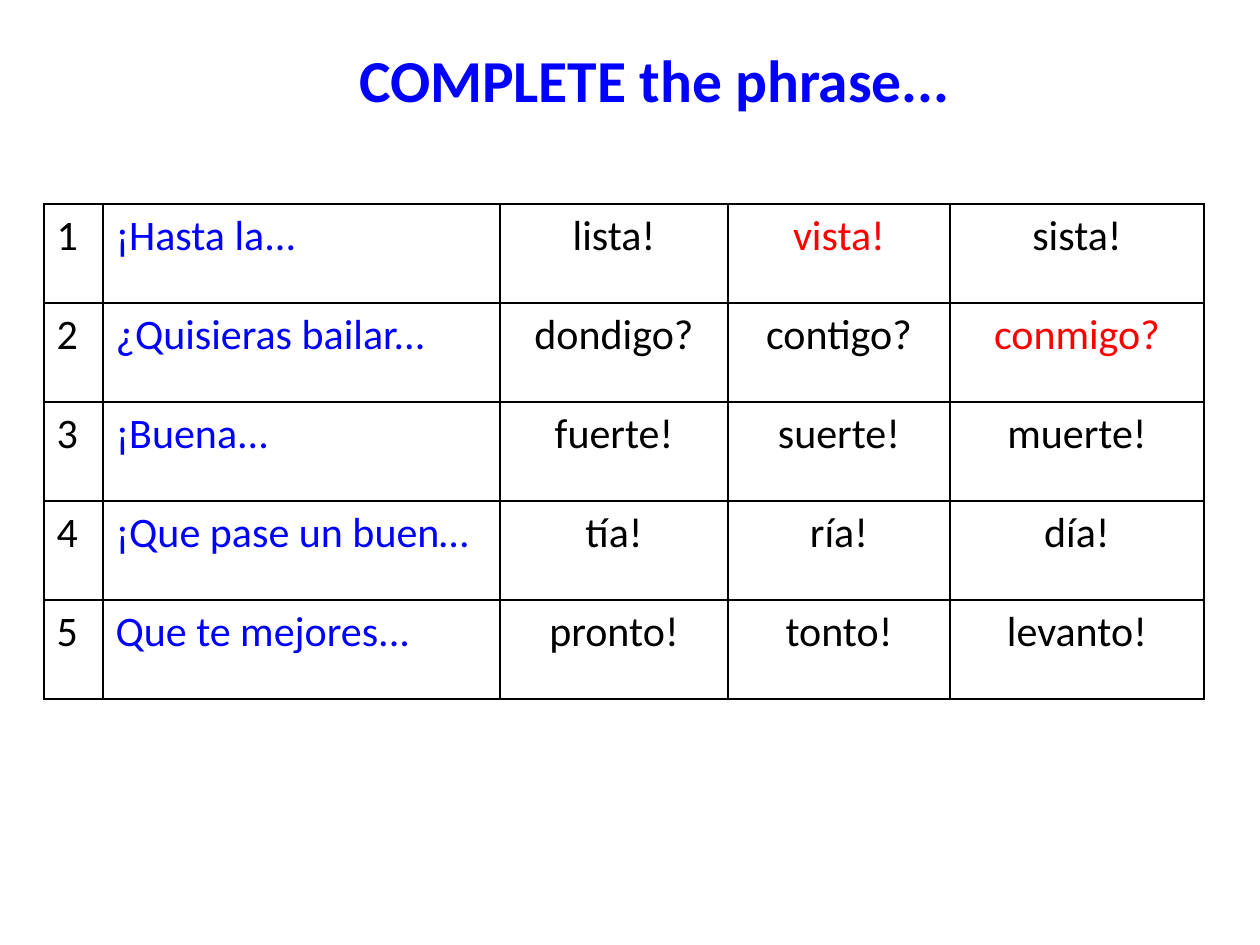
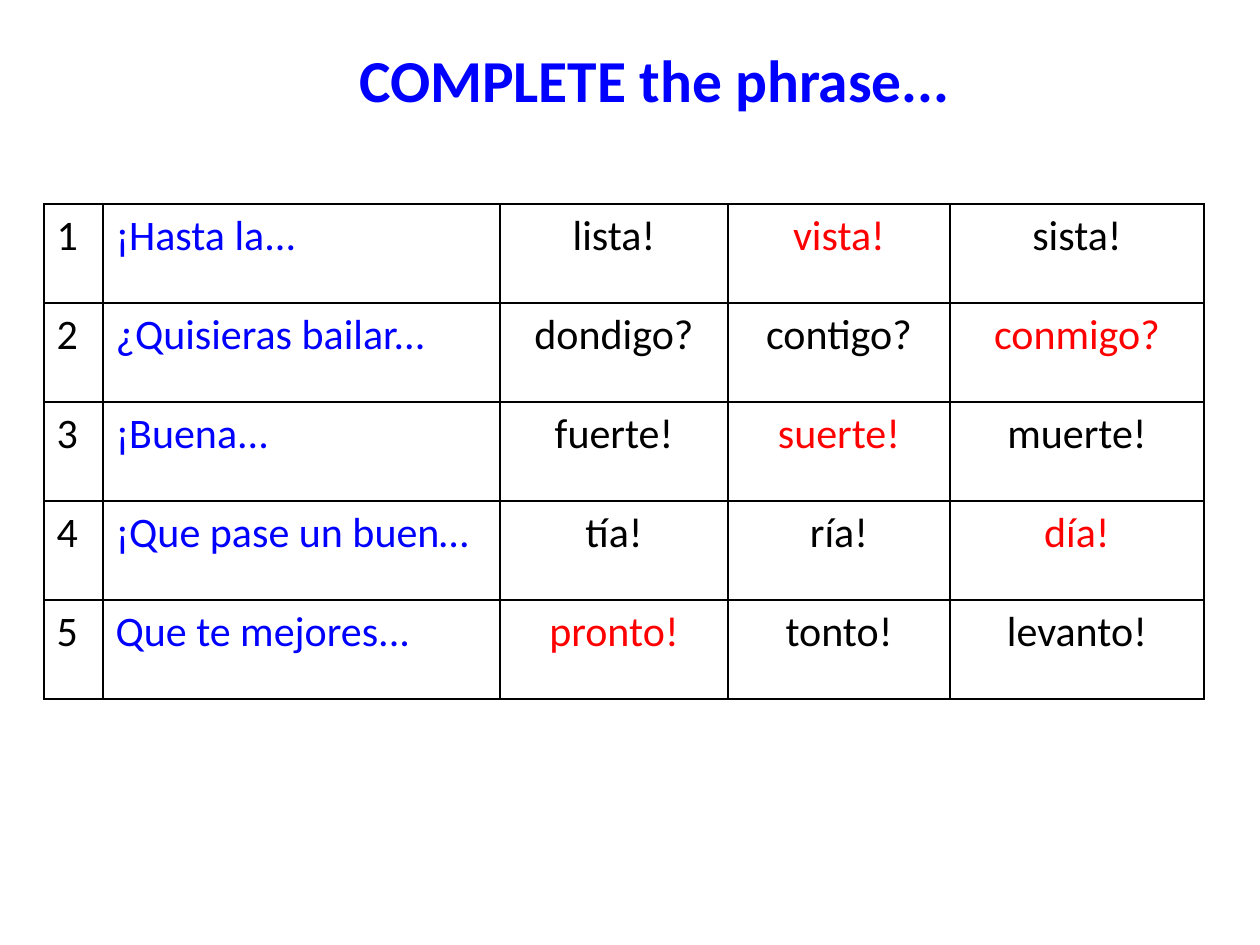
"""Build two phrase-completion quiz slides, revealing more answers on the second."""
from dataclasses import dataclass

from lxml import etree
from pptx import Presentation
from pptx.dml.color import RGBColor
from pptx.enum.text import MSO_ANCHOR, PP_ALIGN
from pptx.oxml.ns import qn
from pptx.util import Emu, Pt

LEFT, CENTER = PP_ALIGN.LEFT, PP_ALIGN.CENTER
MIDDLE = MSO_ANCHOR.MIDDLE


@dataclass(frozen=True)
class Theme:
    font: str = "Calibri"
    title_size: int = 34
    cell_size: int = 24
    text: str = "000000"
    prompt: str = "0000FF"
    answer: str = "FF0000"
    border: str = "000000"
    border_width: int = 1


THEME = Theme()
TITLE = "COMPLETE the phrase..."
PHRASES = [
    ("¡Hasta la...", ["lista!", "vista!", "sista!"], "vista!"),
    ("¿Quisieras bailar...", ["dondigo?", "contigo?", "conmigo?"], "conmigo?"),
    ("¡Buena...", ["fuerte!", "suerte!", "muerte!"], "suerte!"),
    ("¡Que pase un buen…", ["tía!", "ría!", "día!"], "día!"),
    ("Que te mejores...", ["pronto!", "tonto!", "levanto!"], "pronto!"),
]
REVEALED_COUNTS = [2, 5]
COL_WIDTHS = [59, 397, 228, 222, 254]
ROW_HEIGHT = 99


def px(n):
    return Emu(round(n * 914400 / 126))


def write(tf, text, size, color, align, bold=False):
    tf.text = text
    p = tf.paragraphs[0]
    p.alignment = align
    font = p.runs[0].font
    font.name = THEME.font
    font.size = Pt(size)
    font.bold = bold
    font.color.rgb = RGBColor.from_string(color)


prs = Presentation()
prs.slide_width, prs.slide_height = px(1260), px(945)

for revealed in REVEALED_COUNTS:
    s = prs.slides.add_slide(prs.slide_layouts[6])
    tf = s.shapes.add_textbox(px(49), px(0), px(1211), px(158)).text_frame
    tf.word_wrap = True
    tf.vertical_anchor = MIDDLE
    write(tf, TITLE, THEME.title_size, THEME.prompt, CENTER, bold=True)

    table = s.shapes.add_table(
        len(PHRASES), len(COL_WIDTHS), px(44), px(204),
        px(sum(COL_WIDTHS)), px(ROW_HEIGHT * len(PHRASES)),
    ).table
    table.first_row = table.horz_banding = False
    for col, width in zip(table.columns, COL_WIDTHS):
        col.width = px(width)

    for i, (prompt, options, answer) in enumerate(PHRASES):
        table.rows[i].height = px(ROW_HEIGHT)
        for j, text in enumerate([str(i + 1), prompt, *options]):
            cell = table.cell(i, j)
            color = THEME.prompt if j == 1 else THEME.text
            if i < revealed and text == answer:
                color = THEME.answer
            write(cell.text_frame, text, THEME.cell_size, color, LEFT if j < 2 else CENTER)
            tcPr = cell._tc.get_or_add_tcPr()
            for side in ("lnL", "lnR", "lnT", "lnB"):
                ln = etree.SubElement(tcPr, qn(f"a:{side}"), w=str(Pt(THEME.border_width)))
                fill = etree.SubElement(ln, qn("a:solidFill"))
                etree.SubElement(fill, qn("a:srgbClr"), val=THEME.border)
            cell.fill.background()

prs.save("out.pptx")
